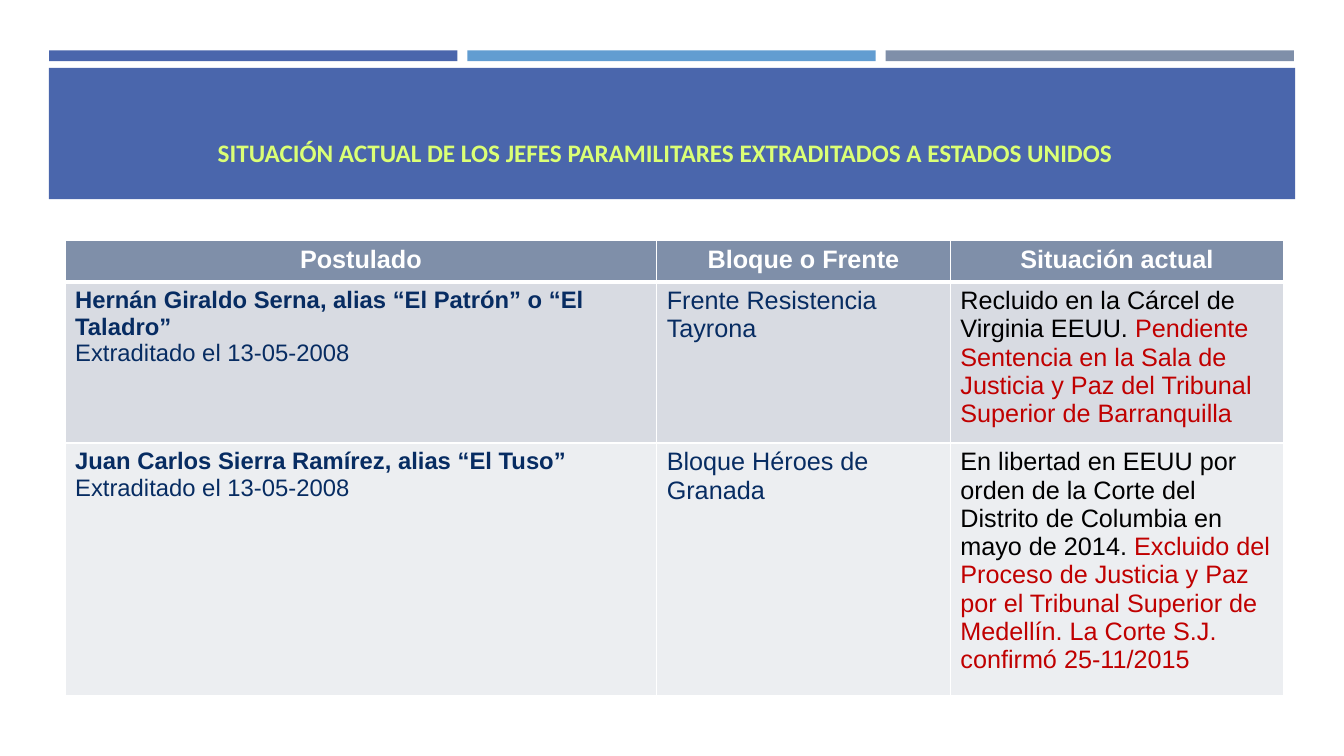
from lxml.etree import SubElement
from pptx import Presentation
from pptx.dml.color import RGBColor
from pptx.enum.shapes import MSO_SHAPE as Shape
from pptx.enum.text import MSO_ANCHOR as Anchor, PP_ALIGN as Align
from pptx.oxml.ns import qn
from pptx.util import Cm, Pt

TITLE = "SITUACIÓN ACTUAL DE LOS JEFES PARAMILITARES EXTRADITADOS A ESTADOS UNIDOS "
HEADINGS = ["Postulado", "Bloque o Frente", "Situación actual"]
LEADERS = [
    {
        "name": "Hernán Giraldo Serna, alias “El Patrón” o “El Taladro”",
        "extradited": "Extraditado el 13-05-2008",
        "bloc": "Frente Resistencia Tayrona",
        "status": "Recluido en la Cárcel de Virginia EEUU. ",
        "ruling": "Pendiente Sentencia en la Sala de Justicia y Paz del Tribunal "
                  "Superior de Barranquilla",
    },
    {
        "name": "Juan Carlos Sierra Ramírez, alias “El Tuso”",
        "extradited": "Extraditado el 13-05-2008",
        "bloc": "Bloque Héroes de Granada",
        "status": "En libertad en EEUU por orden de la Corte del Distrito de "
                  "Columbia en mayo de 2014. ",
        "ruling": "Excluido del Proceso de Justicia y Paz por el Tribunal Superior "
                  "de Medellín. La Corte S.J. confirmó 25-11/2015",
    },
]

THEME = {
    "blue": "4A66AC", "sky": "629DD1", "slate": "7F8FA9",
    "lime": "DBFF75", "white": "FFFFFF", "navy": "072C62",
    "black": "000000", "red": "C00000",
    "bands": ["D8DBE2", "ECEEF1"],
    "title_font": "Calibri", "table_font": "Arial",
    "size": 18, "name_size": 17,
}

BAR_LEFT, BAR_TOP, BAR_WIDTH, BAR_HEIGHT, BAR_GAP = 1.24, 1.27, 10.29, 0.27, 0.25
TABLE_LEFT, TABLE_TOP = 1.64, 6.06
COLUMN_WIDTHS = [14.91, 7.4, 8.4]
ROW_HEIGHTS = [1.04, 3.8, 5.93]


def add_block(slide, left, top, width, height, color):
    block = slide.shapes.add_shape(
        Shape.RECTANGLE, Cm(left), Cm(top), Cm(width), Cm(height))
    block.shadow.inherit = False
    block.fill.solid()
    block.fill.fore_color.rgb = RGBColor.from_string(color)
    block.line.fill.background()


def add_text(paragraph, text, color, size=THEME["size"], bold=False,
             font=THEME["table_font"], align=None, spacing=None):
    """Append a run; set paragraph format only where given."""
    run = paragraph.add_run()
    run.text = text
    run.font.name, run.font.size, run.font.bold = font, Pt(size), bold
    run.font.color.rgb = RGBColor.from_string(color)
    if align is not None:
        paragraph.alignment = align
    if spacing is not None:
        paragraph.line_spacing = spacing


def paint_cell(cell, fill, bottom_width=1):
    """Draw white borders, then fill the cell."""
    properties = cell._tc.get_or_add_tcPr()
    for side, width in (("L", 1), ("R", 1), ("T", 1), ("B", bottom_width)):
        border = SubElement(properties, qn(f"a:ln{side}"), w=str(Pt(width)))
        solid = SubElement(border, qn("a:solidFill"))
        SubElement(solid, qn("a:srgbClr"), val=THEME["white"])
    cell.fill.solid()
    cell.fill.fore_color.rgb = RGBColor.from_string(fill)


def add_header(slide):
    for i, color in enumerate(("blue", "sky", "slate")):
        add_block(slide, BAR_LEFT + i * (BAR_WIDTH + BAR_GAP), BAR_TOP,
                  BAR_WIDTH, BAR_HEIGHT, THEME[color])
    add_block(slide, 1.23, 1.71, 31.41, 3.31, THEME["blue"])
    title = slide.shapes.add_textbox(Cm(1.52), Cm(2.34), Cm(30.63), Cm(2.01)).text_frame
    title.word_wrap = True
    title.vertical_anchor = Anchor.BOTTOM
    add_text(title.paragraphs[0], TITLE, THEME["lime"], bold=True,
             font=THEME["title_font"], align=Align.CENTER, spacing=1.5)


def add_leader_table(slide):
    table = slide.shapes.add_table(
        len(ROW_HEIGHTS), len(COLUMN_WIDTHS), Cm(TABLE_LEFT), Cm(TABLE_TOP),
        Cm(sum(COLUMN_WIDTHS)), Cm(sum(ROW_HEIGHTS))).table
    for column, width in zip(table.columns, COLUMN_WIDTHS):
        column.width = Cm(width)
    for row, height in zip(table.rows, ROW_HEIGHTS):
        row.height = Cm(height)

    for cell, heading in zip(table.rows[0].cells, HEADINGS):
        paint_cell(cell, THEME["slate"], bottom_width=3)
        add_text(cell.text_frame.paragraphs[0], heading, THEME["white"],
                 bold=True, align=Align.CENTER)

    for i, (leader, band) in enumerate(zip(LEADERS, THEME["bands"]), start=1):
        cells = list(table.rows[i].cells)
        for cell in cells:
            paint_cell(cell, band)
        person, bloc, status = (cell.text_frame for cell in cells)
        add_text(person.paragraphs[0], leader["name"], THEME["navy"],
                 size=THEME["name_size"], bold=True)
        add_text(person.add_paragraph(), leader["extradited"], THEME["navy"],
                 size=THEME["name_size"])
        add_text(bloc.paragraphs[0], leader["bloc"], THEME["navy"])
        add_text(status.paragraphs[0], leader["status"], THEME["black"])
        add_text(status.paragraphs[0], leader["ruling"], THEME["red"])


def main():
    deck = Presentation()
    deck.slide_width, deck.slide_height = Cm(33.87), Cm(19.05)
    slide = deck.slides.add_slide(deck.slide_layouts[6])
    add_header(slide)
    add_leader_table(slide)
    deck.save("out.pptx")


if __name__ == "__main__":
    main()
